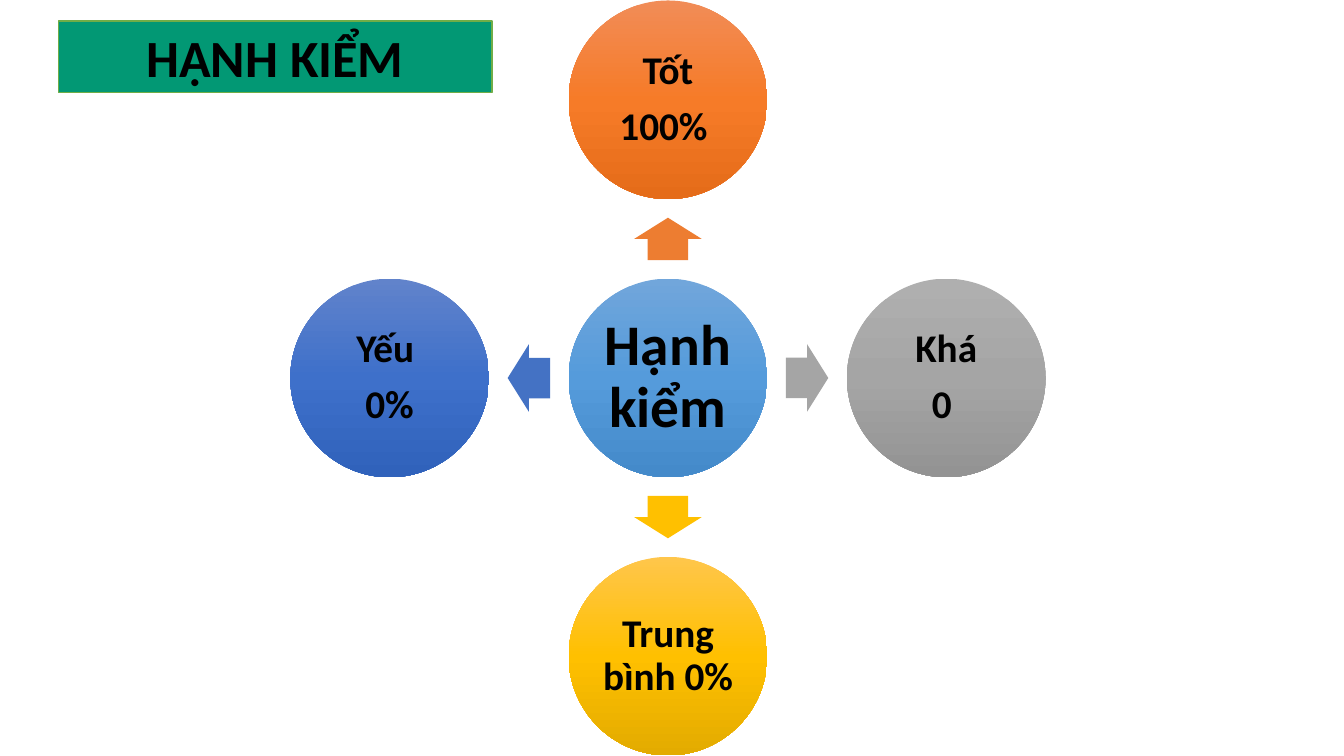
from copy import deepcopy
from math import cos, radians, sin

from pptx import Presentation
from pptx.dml.color import RGBColor
from pptx.enum.shapes import MSO_SHAPE
from pptx.enum.text import MSO_ANCHOR, PP_ALIGN
from pptx.oxml.ns import qn
from pptx.util import Inches, Pt

ELLIPSE = MSO_SHAPE.OVAL
ARROW = MSO_SHAPE.RIGHT_ARROW
RECTANGLE = MSO_SHAPE.RECTANGLE
CENTER = PP_ALIGN.CENTER
MIDDLE = MSO_ANCHOR.MIDDLE

WIDTH, HEIGHT = 13.33, 7.5
CENTER_X, CENTER_Y = 6.625, HEIGHT / 2
RADIUS = 2.76
DIAMETER = 1.97
ARROW_LENGTH, ARROW_WIDTH = 0.42, 0.67


def add_centered(shapes, kind, x, y, width, height, colors):
    shape = shapes.add_shape(kind, Inches(x - width / 2), Inches(y - height / 2),
                             Inches(width), Inches(height))
    shape.shadow.inherit = False
    shape.line.fill.background()
    if len(colors) == 1:
        shape.fill.solid()
        shape.fill.fore_color.rgb = RGBColor.from_string(colors[0])
    else:
        shape.fill.gradient()
        shape.fill.gradient_angle = 270
        stop_list = next(shape._element.spPr.iter(qn("a:gsLst")))
        stop_list.append(deepcopy(stop_list[0]))
        for index, (stop, color) in enumerate(zip(shape.fill.gradient_stops, colors)):
            stop.position = index / 2
            stop.color.rgb = RGBColor.from_string(color)
    return shape


def write_text(shape, lines, size, inset=0.04, line_spacing=0.9, space_after=0.35):
    frame = shape.text_frame
    frame.word_wrap = True
    frame.vertical_anchor = MIDDLE
    frame.margin_left = frame.margin_right = Inches(inset)
    frame.margin_top = frame.margin_bottom = Inches(inset)
    frame.text = "\n".join(lines)
    for paragraph in frame.paragraphs:
        paragraph.alignment = CENTER
        paragraph.line_spacing = line_spacing
        paragraph.space_after = Pt(round(size * space_after, 1))
        font = paragraph.runs[0].font
        font.name = "Calibri"
        font.size = Pt(size)
        font.bold = True
        font.color.rgb = RGBColor.from_string("000000")


presentation = Presentation()
presentation.slide_width = Inches(WIDTH)
presentation.slide_height = Inches(HEIGHT)
slide = presentation.slides.add_slide(presentation.slide_layouts[6])

diagram = slide.shapes.add_group_shape().shapes
hub = add_centered(diagram, ELLIPSE, CENTER_X, CENTER_Y, DIAMETER, DIAMETER,
                   ["71A6DB", "559BDB", "448ACA"])
write_text(hub, ["Hạnh kiểm "], 41, inset=0.06)

ratings = [
    (270, ["Tốt", "100% "], "ED7D31", ["F18C57", "F67B28", "E56C19"]),
    (0, ["Khá", "0 "], "A5A5A5", ["AFAFAF", "A5A5A5", "939393"]),
    (90, ["Trung bình 0%"], "FFC000", ["FFC64B", "FFC000", "E3AB00"]),
    (180, ["Yếu ", "0%"], "4472C4", ["6183CB", "3E70CA", "3062BB"]),
]
for angle, lines, arrow_color, circle_colors in ratings:
    offset_x = RADIUS * cos(radians(angle))
    offset_y = RADIUS * sin(radians(angle))
    arrow = add_centered(diagram, ARROW, CENTER_X + offset_x / 2, CENTER_Y + offset_y / 2,
                         ARROW_LENGTH, ARROW_WIDTH, [arrow_color])
    arrow.adjustments[0] = 0.6
    arrow.adjustments[1] = 0.5
    arrow.rotation = angle
    circle = add_centered(diagram, ELLIPSE, CENTER_X + offset_x, CENTER_Y + offset_y,
                          DIAMETER, DIAMETER, circle_colors)
    write_text(circle, lines, 28)

title = add_centered(slide.shapes, RECTANGLE, 2.73, 0.565, 4.3, 0.71, ["029874"])
title.line.color.rgb = RGBColor.from_string("70AD47")
title.line.width = Pt(1)
write_text(title, ["HẠNH KIỂM"], 37.3, inset=0.05, line_spacing=1.0, space_after=0)

presentation.save("out.pptx")
